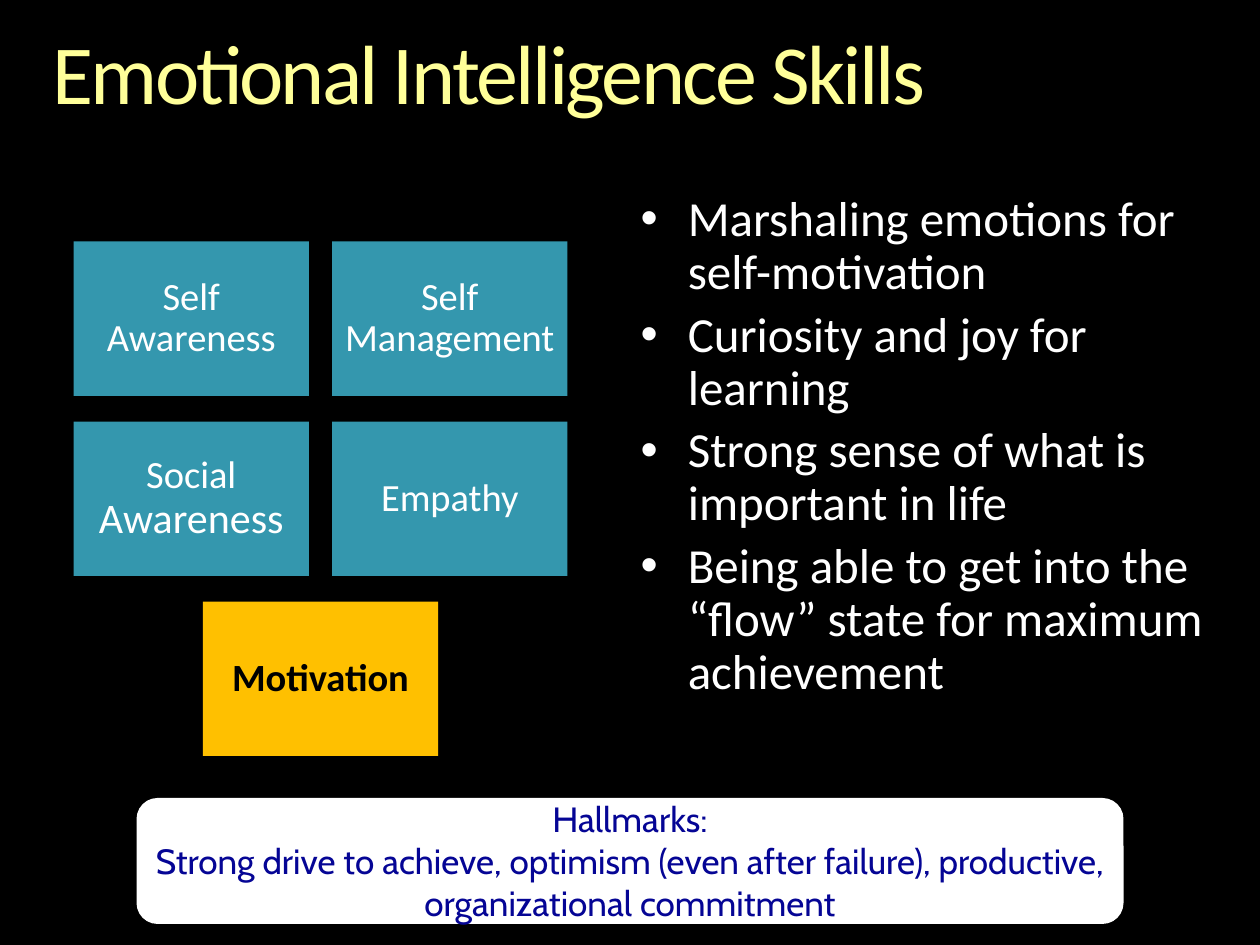
from lxml.etree import SubElement
from pptx import Presentation
from pptx.dml.color import RGBColor
from pptx.enum.shapes import MSO_SHAPE
from pptx.enum.text import MSO_ANCHOR, MSO_AUTO_SIZE, PP_ALIGN
from pptx.oxml.ns import qn
from pptx.util import Pt

BLACK = RGBColor(0x00, 0x00, 0x00)
WHITE = RGBColor(0xFF, 0xFF, 0xFF)
YELLOW = RGBColor(0xFF, 0xFF, 0x99)
TEAL = RGBColor(0x34, 0x97, 0xAE)
AMBER = RGBColor(0xFF, 0xC0, 0x00)
NAVY = RGBColor(0x05, 0x05, 0x95)

SKILL_WIDTH, SKILL_HEIGHT = 134.4, 88.2
COLUMN_STEP, ROW_STEP = 147.7, 102.9
GRID_LEFT, GRID_TOP = 42.1, 138

SKILLS = [
    (0, 0, [("Self Awareness", 22)]),
    (1, 0, [("Self Management", 22)]),
    (0, 1, [("Social ", 22), ("Awareness", 24)]),
    (1, 1, [("Empathy", 22)]),
]
HABITS = [
    "Marshaling emotions for self-motivation",
    "Curiosity and joy for learning",
    "Strong sense of what is important in life",
    "Being able to get into the “flow” state for maximum achievement",
]
HALLMARKS = [
    "Hallmarks:",
    "Strong drive to achieve, optimism (even after failure), productive, "
    "organizational commitment",
]


def add_text(para, text, size, color, font="Calibri", bold=False, tracking=None):
    """Add a formatted run to a paragraph."""
    span = para.add_run()
    span.text = text
    span.font.name = font
    span.font.size = Pt(size)
    span.font.bold = bold
    span.font.color.rgb = color
    if tracking is not None:
        span.font._element.set("spc", str(int(tracking * 100)))


def set_frame(frame, anchor, horizontal=0, vertical=0):
    """Set wrapping, anchor and margins of a text frame."""
    frame.word_wrap = True
    frame.auto_size = MSO_AUTO_SIZE.NONE
    frame.vertical_anchor = anchor
    frame.margin_left = frame.margin_right = Pt(horizontal)
    frame.margin_top = frame.margin_bottom = Pt(vertical)


def get_paragraphs(frame, count):
    """Return the first paragraph and enough new ones to reach count."""
    return [frame.paragraphs[0]] + [frame.add_paragraph() for _ in range(count - 1)]


def place(box, left, top, width, height):
    """Move and size a shape in points."""
    box.left, box.top, box.width, box.height = map(Pt, (left, top, width, height))


def add_block(page, kind, left, top, width, height, fill):
    """Add a plain filled shape without line or shadow."""
    box = page.shapes.add_shape(kind, Pt(left), Pt(top), Pt(width), Pt(height))
    box.shadow.inherit = False
    box.fill.solid()
    box.fill.fore_color.rgb = fill
    box.line.fill.background()
    return box


def add_title(page, text):
    """Fill the title placeholder."""
    box = page.shapes.title
    place(box, 30, 18, 660, 52.7)
    set_frame(box.text_frame, MSO_ANCHOR.TOP)
    para = box.text_frame.paragraphs[0]
    para.alignment = PP_ALIGN.LEFT
    para.line_spacing = 0.9
    add_text(para, text, 48, YELLOW, tracking=-1.5)


def add_bullets(page, lines):
    """Fill the body placeholder with a bulleted list."""
    box = page.placeholders[1]
    place(box, 366, 111, 324, 332.6)
    set_frame(box.text_frame, MSO_ANCHOR.TOP)
    paragraphs = get_paragraphs(box.text_frame, len(lines))
    for index, (para, line) in enumerate(zip(paragraphs, lines)):
        properties = para._p.get_or_add_pPr()
        properties.set("marL", str(Pt(27)))
        properties.set("indent", str(-Pt(27)))
        SubElement(properties, qn("a:buFont")).set("typeface", "Arial")
        SubElement(properties, qn("a:buChar")).set("char", "•")
        para.line_spacing = 0.9
        para.space_before = Pt(5.6 if index else 0)
        add_text(para, line, 28, WHITE)


def add_skill(page, column, row, parts, fill=TEAL, color=WHITE, bold=False):
    """Add one skill tile at a grid position."""
    left = GRID_LEFT + column * COLUMN_STEP
    top = GRID_TOP + row * ROW_STEP
    box = add_block(page, MSO_SHAPE.RECTANGLE, left, top, SKILL_WIDTH, SKILL_HEIGHT, fill)
    set_frame(box.text_frame, MSO_ANCHOR.MIDDLE, 6.6, 6.6)
    para = box.text_frame.paragraphs[0]
    para.alignment = PP_ALIGN.CENTER
    para.line_spacing = 0.9
    for text, size in parts:
        add_text(para, text, size, color, bold=bold)


def add_hallmarks(page, lines):
    """Add the rounded summary panel."""
    box = add_block(page, MSO_SHAPE.ROUNDED_RECTANGLE, 78, 456, 564, 72, WHITE)
    set_frame(box.text_frame, MSO_ANCHOR.MIDDLE, 7.2, 3.6)
    for para, line in zip(get_paragraphs(box.text_frame, len(lines)), lines):
        para.alignment = PP_ALIGN.CENTER
        add_text(para, line, 20, NAVY, font="Cabin")


def main():
    """Build and save the slide."""
    deck = Presentation()
    deck.slide_width, deck.slide_height = Pt(720), Pt(540)
    page = deck.slides.add_slide(deck.slide_layouts[1])
    page.background.fill.solid()
    page.background.fill.fore_color.rgb = BLACK
    add_title(page, "Emotional Intelligence Skills")
    add_bullets(page, HABITS)
    for column, row, parts in SKILLS:
        add_skill(page, column, row, parts)
    add_skill(page, 0.5, 2, [("Motivation", 22)], fill=AMBER, color=BLACK, bold=True)
    add_hallmarks(page, HALLMARKS)
    deck.save("out.pptx")


if __name__ == "__main__":
    main()
